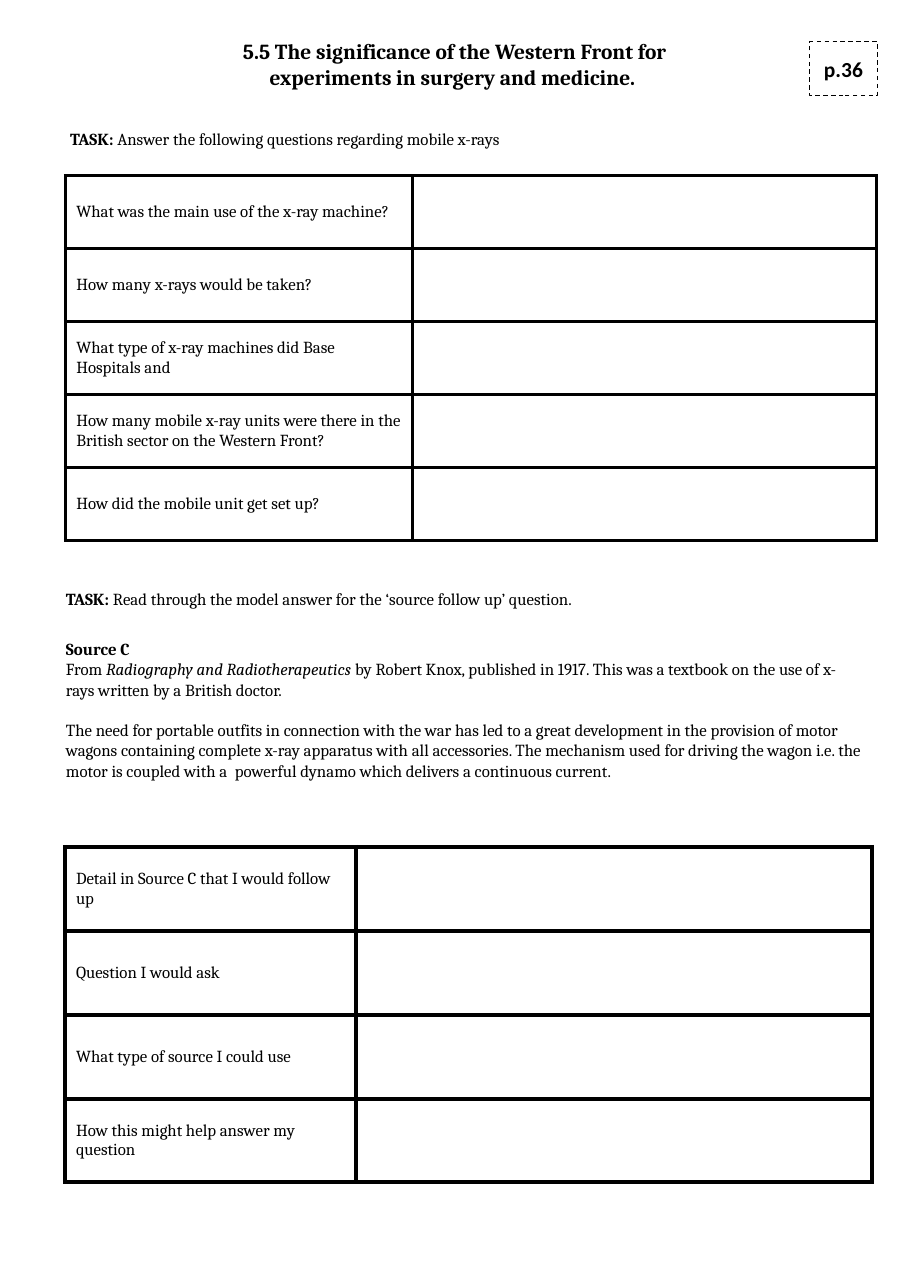
"""Build the worksheet on Western Front surgery with its two answer tables."""
from dataclasses import dataclass

from lxml import etree
from pptx import Presentation
from pptx.dml.color import RGBColor
from pptx.enum.dml import MSO_LINE
from pptx.enum.shapes import MSO_SHAPE
from pptx.enum.text import MSO_ANCHOR, MSO_AUTO_SIZE, PP_ALIGN
from pptx.oxml.ns import qn
from pptx.util import Pt

RECTANGLE = MSO_SHAPE.RECTANGLE
DASH = MSO_LINE.DASH
TOP, MIDDLE = MSO_ANCHOR.TOP, MSO_ANCHOR.MIDDLE
LEFT, CENTER = PP_ALIGN.LEFT, PP_ALIGN.CENTER
NO_AUTOFIT = MSO_AUTO_SIZE.NONE
BLACK, WHITE = "000000", "FFFFFF"
TITLE_ONLY = 5
INSET = 7.2


@dataclass
class Span:
    text: str
    bold: bool = False
    italic: bool = False


@dataclass
class Passage:
    box: tuple[float, float, float, float]
    paragraphs: list[list[Span]]
    gaps: tuple[float, ...] = (0,)
    inset_y: float = INSET


@dataclass
class AnswerTable:
    left: float
    top: float
    columns: tuple[float, float]
    row_height: float
    border: float
    inset_y: float
    prompts: list[str]


TITLE = "5.5 The significance of the Western Front for experiments in surgery and medicine. "

PASSAGES = [
    Passage((38.8, 77, 530.6, 32.4), [
        [Span("TASK: ", bold=True), Span("Answer the following questions regarding mobile x-rays")],
    ]),
    Passage((36, 377.3, 532, 36), [
        [Span("TASK:", bold=True),
         Span(" Read through the model answer for the ‘source follow up’ question.")],
    ]),
    Passage((36, 414, 536.4, 100.8), [
        [Span("Source C", bold=True)],
        [Span("From "), Span("Radiography and Radiotherapeutics ", italic=True),
         Span("by Robert Knox, published in 1917. This was a textbook on the use of "
              "x-rays written by a British doctor.")],
        [Span("The need for portable outfits in connection with the war has led to a great "
              "development in the provision of motor wagons containing complete x-ray apparatus "
              "with all accessories. The mechanism used for driving the wagon i.e. the motor is "
              "coupled with a  powerful dynamo which delivers a continuous current.")],
    ], gaps=(0, 0, 13.2), inset_y=3.6),
]

TABLES = [
    AnswerTable(42.7, 114.7, (226.8, 303.6), 47.7, 2.25, INSET, [
        "What was the main use of the x-ray machine?",
        "How many x-rays would be taken?",
        "What type of x-ray machines did Base Hospitals and",
        "How many mobile x-ray units were there in the British sector on the Western Front?",
        "How did the mobile unit get set up?",
    ]),
    AnswerTable(42.5, 553.5, (190.1, 337.2), 54.8, 3, 3.6, [
        "Detail in Source C that I would follow up",
        "Question I would ask",
        "What type of source I could use",
        "How this might help answer my question",
    ]),
]


def rgb(value: str) -> RGBColor:
    return RGBColor.from_string(value)


def place(shape, box: tuple[float, float, float, float]) -> None:
    shape.left, shape.top, shape.width, shape.height = map(Pt, box)


def set_insets(holder, x: float, y: float) -> None:
    holder.margin_left = holder.margin_right = Pt(x)
    holder.margin_top = holder.margin_bottom = Pt(y)


def write(frame, paragraphs: list[list[Span]], *, size: float = 11, font: str = "Cambria",
          color: str = BLACK, align=LEFT, gaps: tuple[float, ...] = (0,)) -> None:
    for index, (spans, gap) in enumerate(zip(paragraphs, gaps)):
        paragraph = frame.add_paragraph() if index else frame.paragraphs[0]
        paragraph.alignment = align
        paragraph.space_before = Pt(gap)
        for span in spans:
            run = paragraph.add_run()
            run.text = span.text
            run.font.name, run.font.size = font, Pt(size)
            run.font.bold, run.font.italic = span.bold, span.italic
            run.font.color.rgb = rgb(color)


def format_frame(frame, inset_x: float, inset_y: float, anchor=TOP) -> None:
    frame.word_wrap = True
    frame.auto_size = NO_AUTOFIT
    frame.vertical_anchor = anchor
    set_insets(frame, inset_x, inset_y)


def add_title(slide) -> None:
    title = slide.shapes.title
    place(title, (110.9, 18, 373, 41))
    format_frame(title.text_frame, 2 * INSET, INSET)
    write(title.text_frame, [[Span(TITLE, bold=True)]], size=14, align=CENTER)


def add_passage(slide, passage: Passage) -> None:
    frame = slide.shapes.add_textbox(*map(Pt, passage.box)).text_frame
    format_frame(frame, INSET, passage.inset_y)
    write(frame, passage.paragraphs, gaps=passage.gaps)


def add_page_reference(slide) -> None:
    badge = slide.shapes.add_shape(RECTANGLE, Pt(529.2), Pt(27.2), Pt(44.2), Pt(35.2))
    badge.shadow.inherit = False
    badge.fill.solid()
    badge.fill.fore_color.rgb = rgb(WHITE)
    badge.line.color.rgb = rgb(BLACK)
    badge.line.width = Pt(0.75)
    badge.line.dash_style = DASH
    format_frame(badge.text_frame, INSET, INSET, MIDDLE)
    write(badge.text_frame, [[Span("p.36", bold=True)]], size=14, font="Calibri", align=CENTER)


def format_cell(cell, border: float, inset_y: float) -> None:
    cell.vertical_anchor = MIDDLE
    set_insets(cell, INSET, inset_y)
    cell.fill.solid()
    cell.fill.fore_color.rgb = rgb(WHITE)
    properties = cell._tc.get_or_add_tcPr()
    for index, side in enumerate(("a:lnL", "a:lnR", "a:lnT", "a:lnB")):
        edge = etree.Element(qn(side), w=str(Pt(border)))
        fill = etree.SubElement(edge, qn("a:solidFill"))
        etree.SubElement(fill, qn("a:srgbClr"), val=BLACK)
        properties.insert(index, edge)


def add_answer_table(slide, answers: AnswerTable) -> None:
    count = len(answers.prompts)
    table = slide.shapes.add_table(
        count, 2, Pt(answers.left), Pt(answers.top),
        Pt(sum(answers.columns)), Pt(count * answers.row_height)).table
    table.first_row = table.horz_banding = False
    for column, width in zip(table.columns, answers.columns):
        column.width = Pt(width)
    for row, prompt in zip(table.rows, answers.prompts):
        row.height = Pt(answers.row_height)
        for cell in row.cells:
            format_cell(cell, answers.border, answers.inset_y)
        write(row.cells[0].text_frame, [[Span(prompt)]])


def main() -> None:
    deck = Presentation()
    deck.slide_width, deck.slide_height = Pt(595.44), Pt(841.68)
    slide = deck.slides.add_slide(deck.slide_layouts[TITLE_ONLY])
    add_title(slide)
    add_page_reference(slide)
    for passage in PASSAGES:
        add_passage(slide, passage)
    for answers in TABLES:
        add_answer_table(slide, answers)
    deck.save("out.pptx")


if __name__ == "__main__":
    main()
